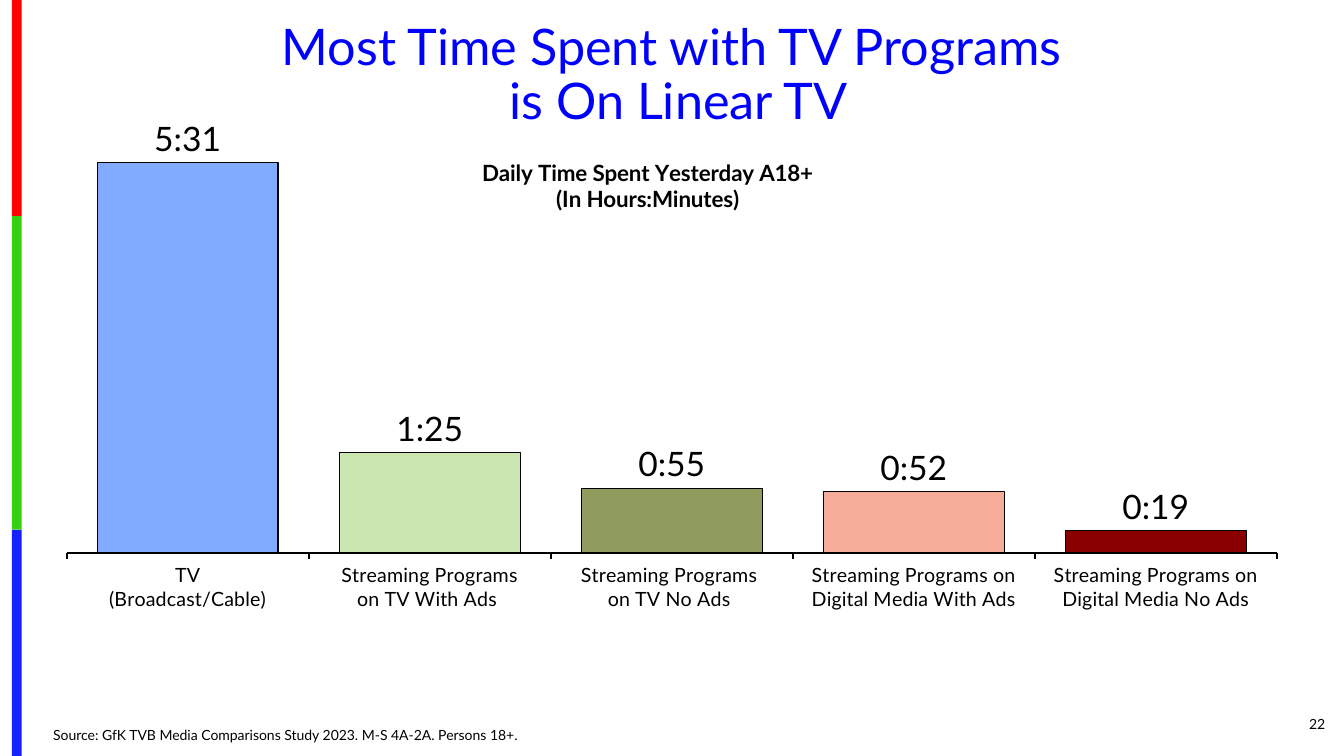
from dataclasses import dataclass
from math import ceil

from lxml import etree
from pptx import Presentation
from pptx.chart.data import CategoryChartData
from pptx.dml.color import RGBColor
from pptx.enum.chart import XL_CHART_TYPE, XL_LABEL_POSITION, XL_TICK_MARK
from pptx.enum.shapes import MSO_SHAPE
from pptx.enum.text import MSO_ANCHOR, PP_ALIGN
from pptx.oxml.ns import qn
from pptx.util import Cm, Pt

COLUMNS = XL_CHART_TYPE.COLUMN_CLUSTERED
OUTSIDE_END = XL_LABEL_POSITION.OUTSIDE_END
TICK_OUT, TICK_NONE = XL_TICK_MARK.OUTSIDE, XL_TICK_MARK.NONE
RECTANGLE = MSO_SHAPE.RECTANGLE
LEFT, CENTER, RIGHT = PP_ALIGN.LEFT, PP_ALIGN.CENTER, PP_ALIGN.RIGHT
MIDDLE, BOTTOM = MSO_ANCHOR.MIDDLE, MSO_ANCHOR.BOTTOM

MINUTES_PER_DAY = 1440
SHARE_STEPS = 10000
TIME_FORMAT = "h:mm;@"


@dataclass(frozen=True)
class Theme:
    font: str = "Lato"
    ink: str = "000000"
    headline: str = "0000FF"
    headline_size: int = 36
    value_size: int = 24
    chart_title_size: int = 16
    category_size: int = 14
    small_size: int = 10


@dataclass(frozen=True)
class Box:
    left: float
    top: float
    width: float
    height: float

    def lengths(self) -> tuple:
        return Cm(self.left), Cm(self.top), Cm(self.width), Cm(self.height)


@dataclass(frozen=True)
class Viewing:
    category: str
    hours: int
    minutes: int
    color: str

    def day_share(self) -> float:
        total = self.hours * 60 + self.minutes
        return ceil(total * SHARE_STEPS / MINUTES_PER_DAY) / SHARE_STEPS


@dataclass(frozen=True)
class Stripe:
    top: float
    bottom: float
    color: str


THEME = Theme()
SLIDE_WIDTH, SLIDE_HEIGHT = 33.87, 19.05
STRIPES = (
    Stripe(0, 5.45, "FE0000"),
    Stripe(5.45, 13.35, "36CF12"),
    Stripe(13.35, SLIDE_HEIGHT, "1322FE"),
)
VIEWINGS = (
    Viewing("TV\n(Broadcast/Cable)", 5, 31, "80ABFF"),
    Viewing("Streaming Programs\non TV With Ads ", 1, 25, "CCE6B2"),
    Viewing("Streaming Programs \non TV No Ads ", 0, 55, "909C5E"),
    Viewing("Streaming Programs on Digital Media With Ads", 0, 52, "F5AD99"),
    Viewing("Streaming Programs on Digital Media No Ads", 0, 19, "8A0000"),
)


def style_font(font, size: int, color: str = THEME.ink, bold: bool = False) -> None:
    font.name = THEME.font
    font.size = Pt(size)
    font.bold = bold
    font.color.rgb = RGBColor.from_string(color)


def add_text(slide, text: str, box: Box, *, size: int = THEME.small_size,
             color: str = THEME.ink, align=LEFT, anchor=MIDDLE,
             line_spacing: float = 1.0) -> None:
    frame = slide.shapes.add_textbox(*box.lengths()).text_frame
    frame.word_wrap = True
    frame.vertical_anchor = anchor
    paragraph = frame.paragraphs[0]
    paragraph.text = text
    paragraph.alignment = align
    paragraph.line_spacing = line_spacing
    for run in paragraph.runs:
        style_font(run.font, size, color)


def add_stripe(slide, stripe: Stripe) -> None:
    box = Box(0.3, stripe.top, 0.25, stripe.bottom - stripe.top)
    band = slide.shapes.add_shape(RECTANGLE, *box.lengths())
    band.shadow.inherit = False
    band.fill.solid()
    band.fill.fore_color.rgb = RGBColor.from_string(stripe.color)
    band.line.fill.background()


def set_layout(parent, index: int, settings: dict[str, str | float]) -> None:
    for old_layout in parent.findall(qn("c:layout")):
        parent.remove(old_layout)
    layout = etree.Element(qn("c:layout"))
    manual = etree.SubElement(layout, qn("c:manualLayout"))
    for tag, value in settings.items():
        etree.SubElement(manual, qn(f"c:{tag}")).set("val", str(value))
    parent.insert(index, layout)


def draw_outline(line, width: float) -> None:
    line.color.rgb = RGBColor.from_string(THEME.ink)
    line.width = Pt(width)


def add_chart_title(chart, text: str) -> None:
    chart.has_title = True
    frame = chart.chart_title.text_frame
    frame.text = text
    for paragraph in frame.paragraphs:
        style_font(paragraph.runs[0].font, THEME.chart_title_size, bold=True)
    title = chart._chartSpace.chart.find(qn("c:title"))
    title.find(qn("c:overlay")).set("val", "1")
    set_layout(title, 1, {"xMode": "edge", "yMode": "edge", "x": 0.344, "y": 0.065})


def add_viewing_chart(slide, viewings: tuple[Viewing, ...], box: Box) -> None:
    data = CategoryChartData(number_format=TIME_FORMAT)
    data.categories = [viewing.category for viewing in viewings]
    data.add_series("Series 1", [viewing.day_share() for viewing in viewings])
    chart = slide.shapes.add_chart(COLUMNS, *box.lengths(), data).chart
    style_font(chart.font, THEME.small_size)
    chart.has_legend = False
    add_chart_title(chart, "Daily Time Spent Yesterday A18+\n(In Hours:Minutes)")
    set_layout(chart._chartSpace.chart.plotArea, 0, {
        "layoutTarget": "inner", "xMode": "edge", "yMode": "edge",
        "x": 0.01, "y": 0.014, "w": 0.98, "h": 0.778})

    category_axis = chart.category_axis
    category_axis.major_tick_mark = TICK_OUT
    category_axis.minor_tick_mark = TICK_NONE
    style_font(category_axis.tick_labels.font, THEME.category_size)
    draw_outline(category_axis.format.line, 1.5)
    time_axis = chart.value_axis
    time_axis.visible = False
    time_axis.has_major_gridlines = False
    time_axis.minimum_scale = 0
    time_axis.maximum_scale = 0.2515

    plot = chart.plots[0]
    plot.gap_width = 34
    plot.vary_by_categories = False
    plot.has_data_labels = True
    labels = plot.data_labels
    labels.show_value = True
    labels.position = OUTSIDE_END
    labels.number_format = TIME_FORMAT
    labels.number_format_is_linked = False
    style_font(labels.font, THEME.value_size)
    for index, viewing in enumerate(viewings):
        column = plot.series[0].points[index].format
        column.fill.solid()
        column.fill.fore_color.rgb = RGBColor.from_string(viewing.color)
        draw_outline(column.line, 0.75)


def main() -> None:
    deck = Presentation()
    deck.slide_width, deck.slide_height = Cm(SLIDE_WIDTH), Cm(SLIDE_HEIGHT)
    slide = deck.slides.add_slide(deck.slide_layouts[6])
    for stripe in STRIPES:
        add_stripe(slide, stripe)
    add_text(slide, "Most Time Spent with TV Programs\v is On Linear TV",
             Box(1.16, 0.41, 31.55, 3.02), size=THEME.headline_size,
             color=THEME.headline, align=CENTER, line_spacing=0.9)
    add_text(slide, "Source: GfK TVB Media Comparisons Study 2023.\u00a0M-S 4A-2A. Persons 18+."
             .replace("\u00a0", " "),
             Box(1.09, 18.24, 23.93, 0.63), anchor=BOTTOM, line_spacing=0.9)
    add_viewing_chart(slide, VIEWINGS, Box(1.37, 2.97, 31.12, 13.84))
    add_text(slide, "22", Box(30.91, 17.73, 2.74, 1.02), align=RIGHT)
    deck.save("out.pptx")


if __name__ == "__main__":
    main()
